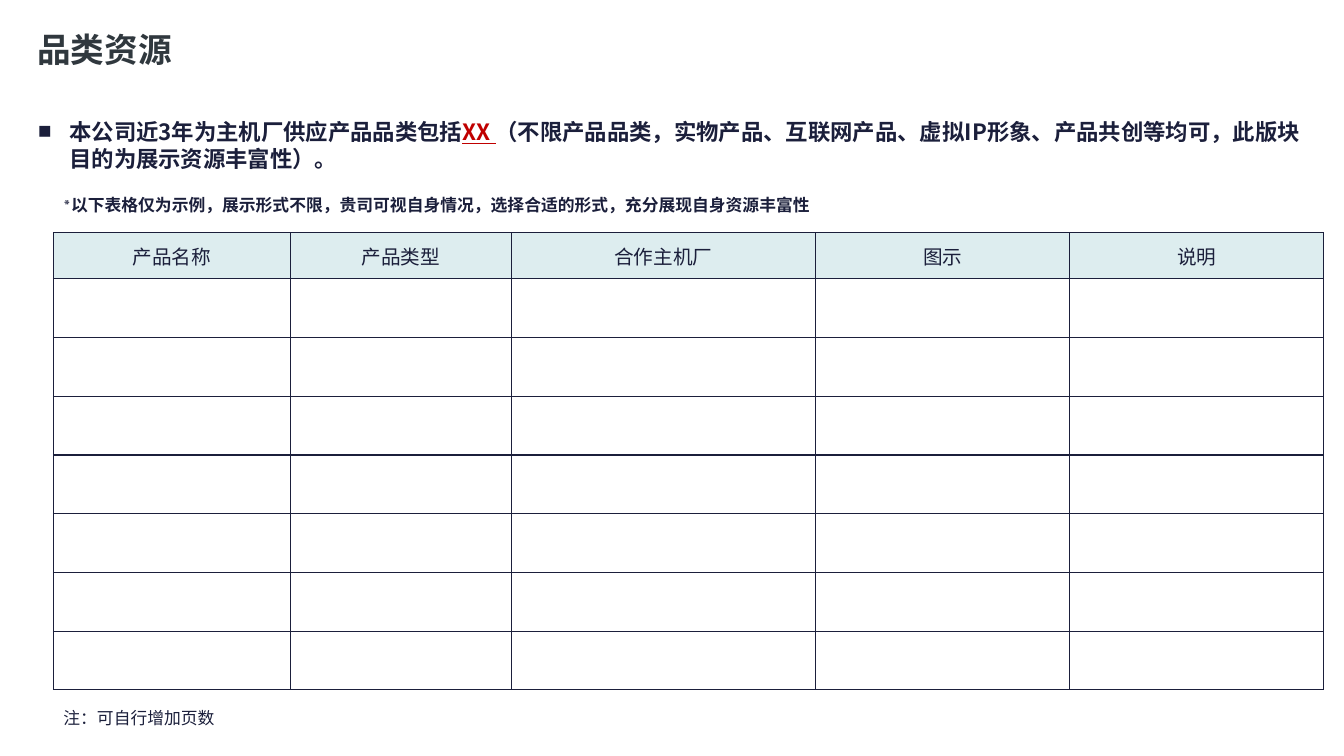
from dataclasses import dataclass
from lxml import etree
from pptx import Presentation
from pptx.dml.color import RGBColor
from pptx.enum.text import MSO_ANCHOR, PP_ALIGN
from pptx.oxml.ns import qn
from pptx.util import Inches, Pt

TOP, MIDDLE = MSO_ANCHOR.TOP, MSO_ANCHOR.MIDDLE
CENTER = PP_ALIGN.CENTER
SLIDE_WIDTH, SLIDE_HEIGHT = Inches(13.33), Inches(7.5)


@dataclass(frozen=True)
class Theme:
    ink: str = "1B1F3B"
    title: str = "30383E"
    accent: str = "C00000"
    header: str = "DDEDEF"
    sans: str = "Noto Sans CJK SC"
    serif: str = "Cambria"
    table_font: str = "Arial"
    title_size: int = 24
    body_size: int = 16
    table_size: int = 14
    note_size: int = 12
    border: int = 1


THEME = Theme()


@dataclass(frozen=True)
class Piece:
    text: str
    size: int
    font: str = THEME.sans
    color: str = THEME.ink
    bold: bool = False
    underline: bool = False


@dataclass(frozen=True)
class TextBlock:
    """A text box; lengths are percentages of the slide's size."""
    left: float
    top: float
    width: float
    height: float
    pieces: tuple[Piece, ...]
    anchor: MSO_ANCHOR = TOP
    line_spacing: float = 1.0
    bullet: str = ""


TEXT_BLOCKS = (
    TextBlock(2.03, 2.53, 39.15, 8.67,
              (Piece("品类资源", THEME.title_size, color=THEME.title, bold=True),),
              anchor=MIDDLE, line_spacing=0.9),
    TextBlock(2.1, 14.93, 95.42, 8.53, (
        Piece("本公司近3年为主机厂供应产品品类包括", THEME.body_size, bold=True),
        Piece("XX ", THEME.body_size, color=THEME.accent, bold=True, underline=True),
        Piece("（不限产品品类，实物产品、互联网产品、虚拟IP形象、产品共创等均可，"
              "此版块目的为展示资源丰富性）。", THEME.body_size, bold=True),
    ), bullet="■"),
    TextBlock(3.98, 25.07, 62.87, 4, (
        Piece("*以下表格仅为示例，展示形式不限，贵司可视自身情况，选择合适的形式，"
              "充分展现自身资源丰富性", THEME.note_size, THEME.serif, bold=True),
    )),
    TextBlock(3.98, 92.93, 21.53, 4,
              (Piece("注：可自行增加页数", THEME.note_size, THEME.serif),)),
)

# Resource table: column titles with their widths, then the row heights
TABLE_LEFT, TABLE_TOP = 3.98, 30.8
COLUMNS = {"产品名称": 17.63, "产品类型": 16.43, "合作主机厂": 22.66,
           "图示": 18.9, "说明": 18.9}
ROW_HEIGHTS = [6.07] + [7.77] * 7


def across(percent: float) -> int:
    return round(SLIDE_WIDTH * percent / 100)


def down(percent: float) -> int:
    return round(SLIDE_HEIGHT * percent / 100)


def add_piece(paragraph, piece: Piece) -> None:
    run = paragraph.add_run()
    run.text = piece.text
    formats = {"size": Pt(piece.size), "name": piece.font,
               "bold": piece.bold, "underline": piece.underline}
    for name, value in formats.items():
        setattr(run.font, name, value)
    run.font.color.rgb = RGBColor.from_string(piece.color)
    east_asian = etree.SubElement(run.font._element, qn("a:ea"))
    east_asian.set("typeface", THEME.sans)


def add_bullet(paragraph, character: str) -> None:
    properties = paragraph._p.get_or_add_pPr()
    properties.set("marL", str(Inches(0.31)))
    properties.set("indent", str(-Inches(0.31)))
    etree.SubElement(properties, qn("a:buFont")).set("typeface", THEME.table_font)
    etree.SubElement(properties, qn("a:buChar")).set("char", character)


def add_text_block(slide, block: TextBlock) -> None:
    shape = slide.shapes.add_textbox(across(block.left), down(block.top),
                                     across(block.width), down(block.height))
    frame = shape.text_frame
    for name, value in {"word_wrap": True, "vertical_anchor": block.anchor}.items():
        setattr(frame, name, value)
    paragraph = frame.paragraphs[0]
    paragraph.line_spacing = block.line_spacing
    if block.bullet:
        add_bullet(paragraph, block.bullet)
    for piece in block.pieces:
        add_piece(paragraph, piece)


def add_borders(cell) -> None:
    properties = cell._tc.get_or_add_tcPr()
    for side in ("lnL", "lnR", "lnT", "lnB"):
        line = etree.SubElement(properties, qn(f"a:{side}"), w=str(Pt(THEME.border)))
        fill = etree.SubElement(line, qn("a:solidFill"))
        etree.SubElement(fill, qn("a:srgbClr"), val=THEME.ink)


def add_resource_table(slide) -> None:
    shape = slide.shapes.add_table(
        len(ROW_HEIGHTS), len(COLUMNS), across(TABLE_LEFT), down(TABLE_TOP),
        across(sum(COLUMNS.values())), down(sum(ROW_HEIGHTS)))
    table = shape.table
    table.first_row = table.horz_banding = False
    for column, width in zip(table.columns, COLUMNS.values()):
        column.width = across(width)
    for row, height in zip(table.rows, ROW_HEIGHTS):
        row.height = down(height)
    for cell in table.iter_cells():
        add_borders(cell)
        cell.fill.background()
    # Header row
    for cell, title in zip(table.rows[0].cells, COLUMNS):
        cell.fill.solid()
        cell.fill.fore_color.rgb = RGBColor.from_string(THEME.header)
        cell.vertical_anchor = MIDDLE
        paragraph = cell.text_frame.paragraphs[0]
        paragraph.alignment = CENTER
        add_piece(paragraph, Piece(title, THEME.table_size, THEME.table_font))


def main() -> None:
    presentation = Presentation()
    presentation.slide_width, presentation.slide_height = SLIDE_WIDTH, SLIDE_HEIGHT
    slide = presentation.slides.add_slide(presentation.slide_layouts[6])
    for block in TEXT_BLOCKS:
        add_text_block(slide, block)
    add_resource_table(slide)
    presentation.save("out.pptx")


if __name__ == "__main__":
    main()
